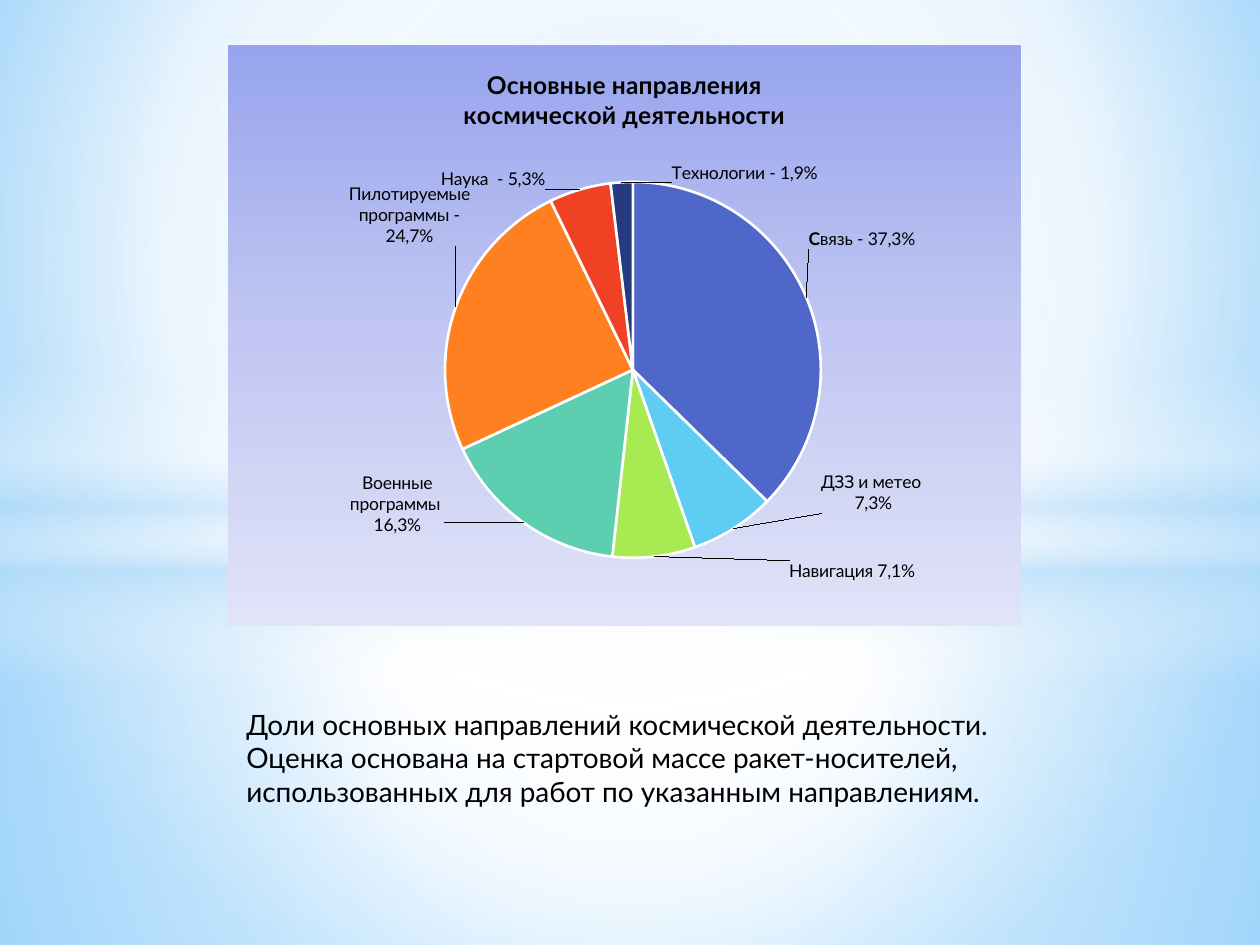
import math
from lxml import etree
from pptx import Presentation
from pptx.chart import data
from pptx.dml.color import RGBColor
from pptx.enum import chart as kinds, shapes, text
from pptx.oxml import ns, parse_xml
from pptx.util import Pt

THEME = {
    "font": "Lato", "ink": "000000", "edge": "FFFFFF",
    "label": 10, "title": 14, "body": 16,
    "page": [(0, "9ED5FF", 100), (60, "FFFFFF", 100), (100, "5BB9FF", 100)],
    "panel": [(0, "98A4ED", 100), (50, "C1C7F2", 100), (100, "E1E3F8", 100)],
}
MID = (50, 50, 50, 50)
GLOWS = [
    ("RECTANGLE", (0, 304.5, 720, 235.5), MID,
     [(0, "FFFFFF", 91), (37, "FFFFFF", 76), (100, "B4DCFA", 79)]),
    ("RECTANGLE", (0, 0, 720, 304.5), MID,
     [(0, "FFFFFF", 89), (48, "FFFFFF", 62), (100, "B4DCFA", 79)]),
    ("RECTANGLE", (0, 209, 720, 180), None,
     [(0, "FFFFFF", 0), (29, "FFFFFF", 30), (45, "B4DCFA", 40),
      (55, "FFFFFF", 26), (65, "B4DCFA", 60), (100, "FFFFFF", 0)]),
    ("OVAL", (0, 126, 720, 402), MID, [(0, "FFFFFF", 100), (54, "FFFFFF", 0)]),
]
TITLE = "Основные направления\nкосмической деятельности"
SLICES = [
    (0.373, "4E67C8", "Связь - 37,3%", (462.2, 130.5, 61, 12)),
    (0.073, "5ECCF3", "ДЗЗ и метео \n7,3%", (469.3, 269.5, 58, 24)),
    (0.071, "A7EA52", "Навигация 7,1%", (451, 320.5, 72, 12)),
    (0.163, "5DCEAF", "Военные программы \n16,3%", (202, 270, 52, 36)),
    (0.247, "FF8021", "Пилотируемые программы -\n24,7%", (198.5, 105, 70, 36)),
    (0.053, "F14124", "Наука  - 5,3%", (251.5, 96.5, 60, 12)),
    (0.019, "283A7F", "Технологии - 1,9%", (384, 93, 83, 12)),
]
NOTE = ("Доли основных направлений космической деятельности. Оценка основана "
        "на стартовой массе ракет-носителей, использованных для работ по указанным направлениям.")
FRAME = (130.3, 25.9, 453.4, 331.6)
HUB, RADIUS, GAP = (361.7, 211.4), 107.4, 4.3


def grad(stops, focus=None):
    marks = "".join(
        f'<a:gs pos="{at * 1000}"><a:srgbClr val="{tint}">'
        f'<a:alpha val="{alpha * 1000}"/></a:srgbClr></a:gs>'
        for at, tint, alpha in stops)
    if focus:
        sides = " ".join(f'{k}="{v * 1000}"' for k, v in zip("ltrb", focus))
        way = f'<a:path path="circle"><a:fillToRect {sides}/></a:path>'
    else:
        way = '<a:lin ang="5400000" scaled="0"/>'
    return parse_xml(f'<a:gradFill {ns.nsdecls("a")} rotWithShape="1">'
                     f'<a:gsLst>{marks}</a:gsLst>{way}</a:gradFill>')


def paint(fill, root, stops, focus):
    fill.solid()
    old = root.find(".//" + ns.qn("a:solidFill"))
    old.getparent().replace(old, grad(stops, focus))


def place(node, spot, **vals):
    for old in node.findall(ns.qn("c:layout")):
        node.remove(old)
    layout = etree.Element(ns.qn("c:layout"))
    manual = etree.SubElement(layout, ns.qn("c:manualLayout"))
    for key, val in vals.items():
        etree.SubElement(manual, ns.qn("c:" + key)).set(
            "val", val if isinstance(val, str) else f"{val:.4f}")
    node.insert(spot, layout)


def style(font, size, bold=False):
    for key, val in {"name": THEME["font"], "size": Pt(size), "bold": bold}.items():
        setattr(font, key, val)
    font.color.rgb = RGBColor.from_string(THEME["ink"])


def shift(turn, box):
    left, top, wide, high = box
    x, y = math.sin(turn), -math.cos(turn)
    reach = RADIUS + GAP
    side = 0.5 if abs(x) < 0.087 else float(x < 0)
    home = (HUB[0] + reach * x - wide * side,
            HUB[1] + reach * y - high * (y < 0))
    return (left - home[0]) / FRAME[2], (top - home[1]) / FRAME[3]


def glow(slide):
    paint(slide.background.fill, slide.element, THEME["page"], (20, 10, 20, 60))
    for kind, box, focus, stops in GLOWS:
        shape = slide.shapes.add_shape(
            getattr(shapes.MSO_SHAPE, kind), *map(Pt, box))
        shape.shadow.inherit = False
        shape.line.fill.background()
        paint(shape.fill, shape.element.spPr, stops, focus)


def pie(slide):
    feed = data.CategoryChartData(number_format="0.0%")
    feed.categories = [str(n + 1) for n in range(len(SLICES))]
    feed.add_series("Series 1", [row[0] for row in SLICES])
    chart = slide.shapes.add_chart(
        kinds.XL_CHART_TYPE.PIE, *map(Pt, FRAME), feed).chart
    chart.has_legend = False
    style(chart.font, THEME["label"])
    chart.has_title = True
    chart.chart_title.text_frame.text = TITLE
    for para in chart.chart_title.text_frame.paragraphs:
        for run in para.runs:
            style(run.font, THEME["title"], True)

    plot = chart.plots[0]
    plot.vary_by_categories = False
    series = plot.series[0]
    labels = series.data_labels
    for key, val in {"show_value": True, "number_format": "0.0%",
                     "number_format_is_linked": False}.items():
        setattr(labels, key, val)
    style(labels.font, THEME["label"], True)
    total, done = sum(row[0] for row in SLICES), 0
    for n, (value, tint, words, box) in enumerate(SLICES):
        point = series.points[n]
        point.format.fill.solid()
        point.format.fill.fore_color.rgb = RGBColor.from_string(tint)
        point.format.line.color.rgb = RGBColor.from_string(THEME["edge"])
        point.format.line.width = Pt(1.5)
        label = point.data_label
        label.position = kinds.XL_LABEL_POSITION.OUTSIDE_END
        frame = label.text_frame
        frame.text = words
        if n == 0:
            first = frame.paragraphs[0]
            first.runs[0].text = words[0]
            first.add_run().text = words[1:]
        for para in frame.paragraphs:
            for run in para.runs:
                style(run.font, THEME["label"])
        if n == 0:
            first.runs[0].font.bold = True
        x, y = shift(2 * math.pi * (done + value / 2) / total, box)
        place(series._element.xpath("c:dLbls/c:dLbl")[n], 1, x=x, y=y)
        done += value

    root = chart._chartSpace
    edges = {"xMode": "edge", "yMode": "edge"}
    place(root.xpath("c:chart/c:title")[0], 1, **edges, x=0.292, y=0.031)
    place(root.xpath("c:chart/c:plotArea")[0], 0, layoutTarget="inner", **edges,
          x=(HUB[0] - RADIUS - FRAME[0]) / FRAME[2],
          y=(HUB[1] - RADIUS - FRAME[1]) / FRAME[3],
          w=2 * RADIUS / FRAME[2], h=2 * RADIUS / FRAME[3])
    panel = etree.Element(ns.qn("c:spPr"))
    panel.append(grad(THEME["panel"]))
    line = etree.SubElement(panel, ns.qn("a:ln"))
    etree.SubElement(line, ns.qn("a:noFill"))
    root.find(ns.qn("c:chart")).addnext(panel)


def note(slide):
    frame = slide.shapes.add_textbox(*map(Pt, (133.7, 400.5, 453, 65.5))).text_frame
    frame.word_wrap = True
    frame.auto_size = text.MSO_AUTO_SIZE.SHAPE_TO_FIT_TEXT
    run = frame.paragraphs[0].add_run()
    run.text = NOTE
    style(run.font, THEME["body"])


def main():
    deck = Presentation()
    deck.slide_width, deck.slide_height = Pt(720), Pt(540)
    slide = deck.slides.add_slide(deck.slide_layouts[6])
    glow(slide)
    pie(slide)
    note(slide)
    deck.save("out.pptx")


if __name__ == "__main__":
    main()
